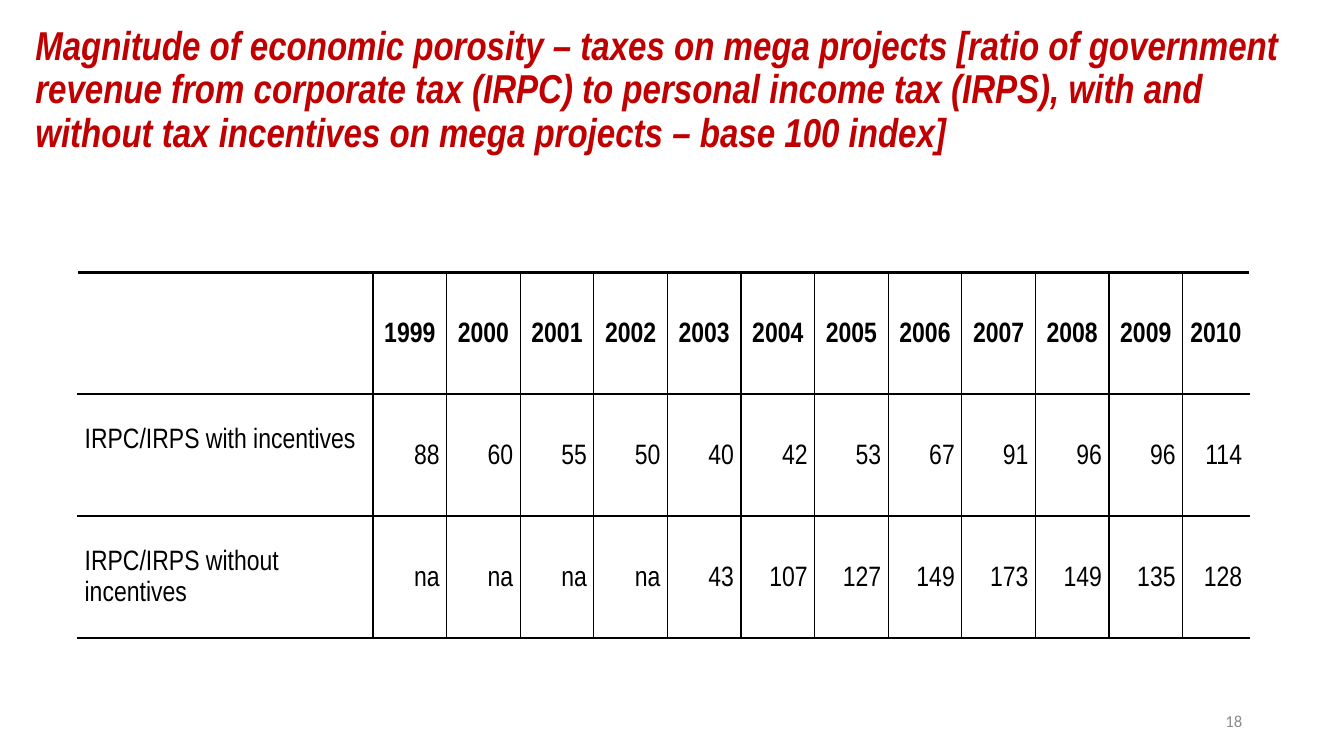
from lxml.etree import SubElement
from pptx import Presentation
from pptx.dml.color import RGBColor
from pptx.enum.text import MSO_ANCHOR, PP_ALIGN
from pptx.oxml.ns import qn
from pptx.util import Inches, Pt


def style(paragraph, size, color, name="Arial Narrow", bold=False, italic=False):
    font = paragraph.font
    font.size, font.name, font.bold, font.italic = Pt(size), name, bold, italic
    font.color.rgb = RGBColor.from_string(color)


def add_border(cell, side, points):
    line = SubElement(cell._tc.get_or_add_tcPr(), qn(f"a:ln{side}"), w=str(Pt(points)))
    fill = SubElement(line, qn("a:solidFill"))
    SubElement(fill, qn("a:srgbClr"), val="000000")


tax_ratios = [
    ["", *map(str, range(1999, 2011))],
    ["IRPC/IRPS with incentives", "88", "60", "55", "50", "40", "42",
     "53", "67", "91", "96", "96", "114"],
    ["IRPC/IRPS without incentives", "na", "na", "na", "na", "43", "107",
     "127", "149", "173", "149", "135", "128"],
]
column_widths = [2.93] + [0.73] * 11 + [0.66]
rule_weights = [2.25, 1.5, 1, 2.25]
last_column = len(column_widths) - 1

prs = Presentation()
prs.slide_width, prs.slide_height = Inches(13.33), Inches(7.5)
slide = prs.slides.add_slide(prs.slide_layouts[5])

title = slide.shapes.title
title.left, title.top = Inches(0.25), Inches(0.2)
title.width, title.height = Inches(12.89), Inches(1.4)
title.text_frame.text = (
    "Magnitude of economic porosity – taxes on mega projects [ratio of government "
    "revenue from corporate tax (IRPC) to personal income tax (IRPS), with and "
    "without tax incentives on mega projects – base 100 index]"
)
title.text_frame.vertical_anchor = MSO_ANCHOR.MIDDLE
headline = title.text_frame.paragraphs[0]
headline.alignment = PP_ALIGN.LEFT
headline.line_spacing = 0.9
style(headline, 28.8, "C00000", bold=True, italic=True)

ratio_table = slide.shapes.add_table(
    len(tax_ratios), len(column_widths),
    Inches(0.77), Inches(2.7), Inches(11.64), Inches(3.63),
).table
ratio_table.horz_banding = False
for column, width in zip(ratio_table.columns, column_widths):
    column.width = Inches(width)

for r, ratios in enumerate(tax_ratios):
    ratio_table.rows[r].height = Inches(1.21)
    for c, entry in enumerate(ratios):
        cell = ratio_table.cell(r, c)
        cell.text = entry
        cell.margin_left = cell.margin_right = Inches(0.07)
        cell.margin_top = cell.margin_bottom = 0
        paragraph = cell.text_frame.paragraphs[0]
        paragraph.line_spacing = 1.15
        style(paragraph, 20, "000000", bold=r == 0)
        if c == 0:
            cell.margin_top = Inches(0.3)
        else:
            cell.vertical_anchor = MSO_ANCHOR.MIDDLE
            paragraph.alignment = PP_ALIGN.RIGHT if r else PP_ALIGN.CENTER
        if r == 0:
            paragraph.space_before = paragraph.space_after = Pt(2)
        if c > 0:
            add_border(cell, "L", 1)
        if c < last_column:
            add_border(cell, "R", 1)
        add_border(cell, "T", rule_weights[r])
        add_border(cell, "B", rule_weights[r + 1])
        cell.fill.background()

page_number = slide.shapes.add_textbox(Inches(9.42), Inches(6.95), Inches(3), Inches(0.4)).text_frame
page_number.word_wrap = True
page_number.vertical_anchor = MSO_ANCHOR.MIDDLE
page_number.text = "18"
page_number.paragraphs[0].alignment = PP_ALIGN.RIGHT
style(page_number.paragraphs[0], 12, "8C8C8C", name="Calibri")

prs.save("out.pptx")
